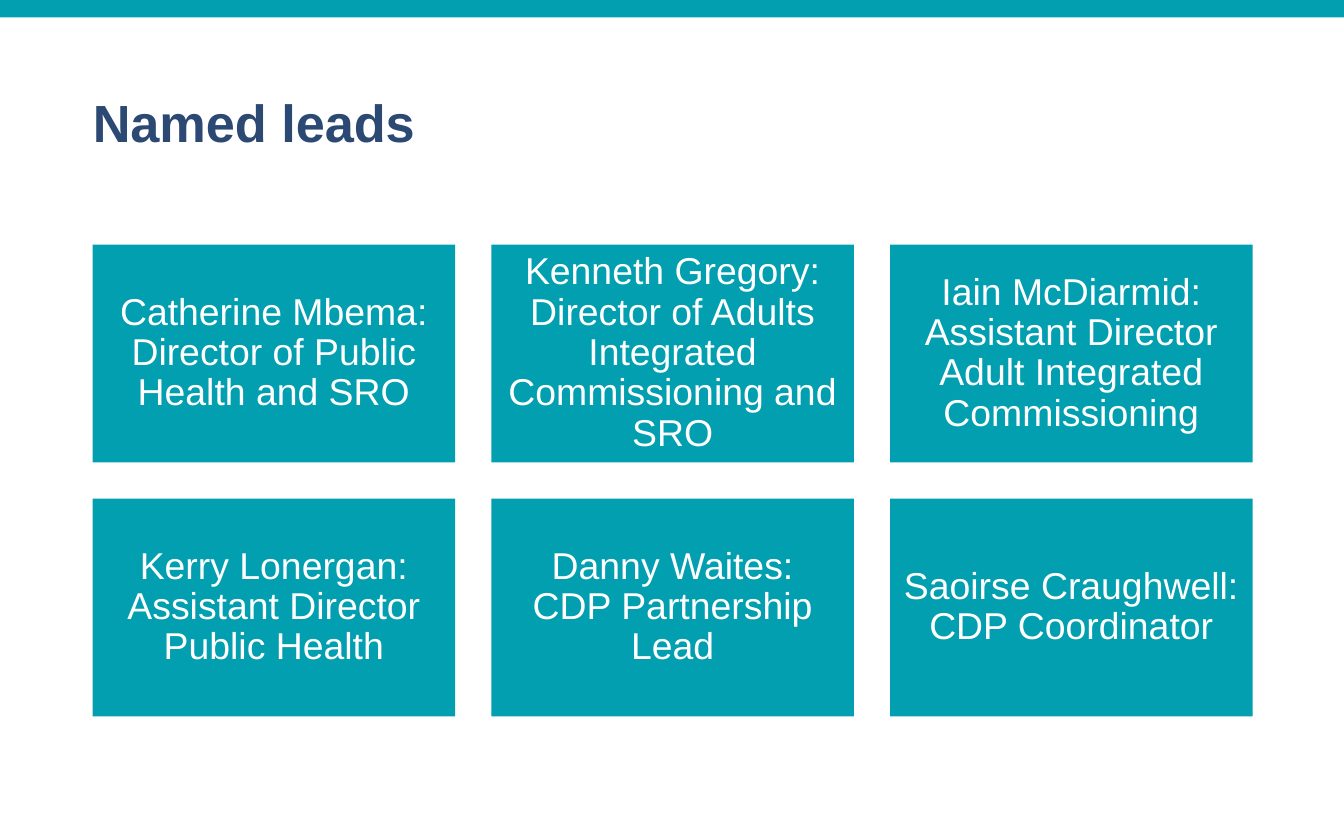
from pptx import Presentation
from pptx.dml.color import RGBColor
from pptx.enum.shapes import MSO_SHAPE
from pptx.enum.text import MSO_ANCHOR, PP_ALIGN
from pptx.util import Inches, Pt

TEAL = RGBColor(0x02, 0x9F, 0xB0)
NAVY = RGBColor(0x2B, 0x49, 0x72)
WHITE = RGBColor(0xFF, 0xFF, 0xFF)
FONT = "Arial"

LEADS = [
    ("Catherine Mbema:", "Director of Public Health and SRO"),
    ("Kenneth Gregory:", "Director of Adults Integrated Commissioning and SRO"),
    ("Iain McDiarmid:", "Assistant Director Adult Integrated Commissioning"),
    ("Kerry Lonergan:", "Assistant Director Public Health"),
    ("Danny Waites:", "CDP Partnership Lead"),
    ("Saoirse Craughwell:", "CDP Coordinator"),
]


def add_span(para, text, size, color, bold=False):
    span = para.add_run()
    span.text = text
    span.font.name = FONT
    span.font.size = Pt(size)
    span.font.bold = bold
    span.font.color.rgb = color


def prepare_frame(shape, margin):
    """Set wrapping, anchor and margins; return the first paragraph."""
    frame = shape.text_frame
    frame.word_wrap = True
    frame.vertical_anchor = MSO_ANCHOR.MIDDLE
    frame.margin_left = frame.margin_right = Inches(margin)
    frame.margin_top = frame.margin_bottom = Inches(margin)
    para = frame.paragraphs[0]
    para.line_spacing = 0.9
    return para


def add_rectangle(page, left, top, width, height):
    shape = page.shapes.add_shape(
        MSO_SHAPE.RECTANGLE, Inches(left), Inches(top), Inches(width), Inches(height))
    shape.shadow.inherit = False
    shape.fill.solid()
    shape.fill.fore_color.rgb = TEAL
    shape.line.fill.background()
    return shape


def add_title(page, left, top, width, height, text):
    box = page.shapes.add_textbox(
        Inches(left), Inches(top), Inches(width), Inches(height))
    add_span(prepare_frame(box, 0), text, 28, NAVY, bold=True)


def add_card(page, left, top, width, height, name, role):
    card = add_rectangle(page, left, top, width, height)
    para = prepare_frame(card, 0.08)
    para.alignment = PP_ALIGN.CENTER
    add_span(para, name, 20, WHITE)
    para.add_line_break()
    add_span(para, role, 20, WHITE)


def add_lead_grid(page, left, top, width, height, columns=3, gap=0.27):
    rows = len(LEADS) // columns
    card_width = (width - gap * (columns - 1)) / columns
    card_height = (height - gap * (rows - 1)) / rows
    for index, (name, role) in enumerate(LEADS):
        row, column = divmod(index, columns)
        add_card(page, left + column * (card_width + gap),
                 top + row * (card_height + gap),
                 card_width, card_height, name, role)


def main():
    deck = Presentation()
    deck.slide_width, deck.slide_height = Inches(10), Inches(6.25)
    page = deck.slides.add_slide(deck.slide_layouts[6])

    # Top band
    add_rectangle(page, 0, 0, 10, 0.13)
    # Heading
    add_title(page, 0.69, 0.33, 8.62, 1.21, "Named leads")
    # Cards, one for each lead
    add_lead_grid(page, 0.69, 1.82, 8.63, 3.51)

    deck.save("out.pptx")


if __name__ == "__main__":
    main()
